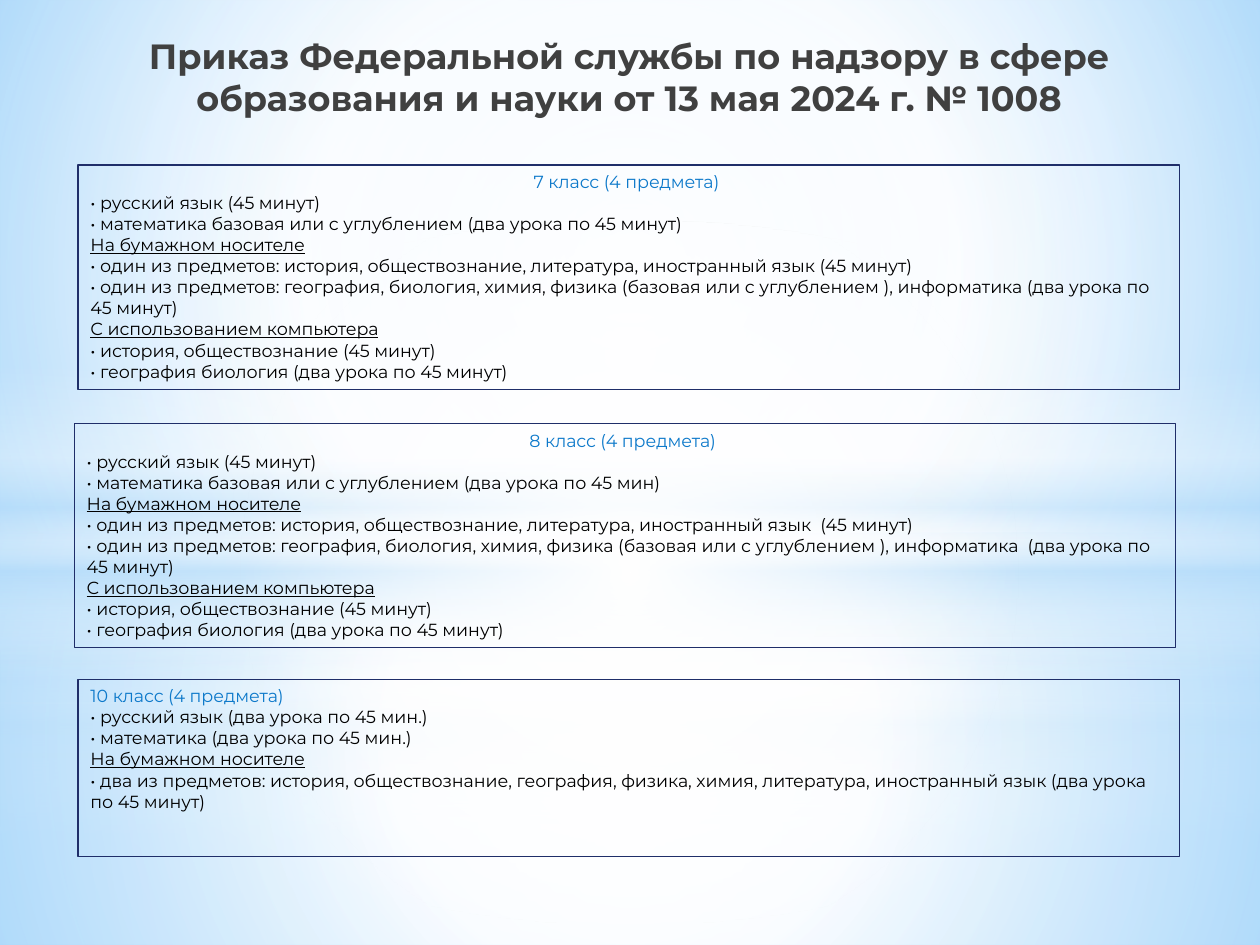
from lxml import etree
from pptx import Presentation
from pptx.dml.color import RGBColor
from pptx.enum.shapes import MSO_SHAPE
from pptx.enum.text import MSO_ANCHOR, MSO_AUTO_SIZE, PP_ALIGN
from pptx.oxml.ns import qn
from pptx.util import Inches, Pt

RECT, OVAL = MSO_SHAPE.RECTANGLE, MSO_SHAPE.OVAL
TOP, BOTTOM = MSO_ANCHOR.TOP, MSO_ANCHOR.BOTTOM
LEFT, CENTER = PP_ALIGN.LEFT, PP_ALIGN.CENTER
NO_AUTOFIT = MSO_AUTO_SIZE.NONE

FONT = "Montserrat"
WHITE = RGBColor(0xFF, 0xFF, 0xFF)
PALE = RGBColor(0xB4, 0xDC, 0xFA)
SKY = RGBColor(0x9E, 0xD5, 0xFF)
AZURE = RGBColor(0x5B, 0xB9, 0xFF)
NAVY = RGBColor(0x1F, 0x2E, 0x69)
BLUE = RGBColor(0x0D, 0x79, 0xCA)
BLACK = RGBColor(0, 0, 0)
GRAY = RGBColor(0x40, 0x40, 0x40)
MIDDLE = (50, 50, 50, 50)


def set_gradient(fill, element, stops, focus=None):
    fill.gradient()
    gradient = element.find(".//" + qn("a:gradFill"))
    gradient.clear()
    gradient.set("rotWithShape", "1")
    stop_list = etree.SubElement(gradient, qn("a:gsLst"))
    for position, color, opacity in stops:
        stop = etree.SubElement(stop_list, qn("a:gs"), pos=str(position * 1000))
        tint = etree.SubElement(stop, qn("a:srgbClr"), val=str(color))
        if opacity < 100:
            etree.SubElement(tint, qn("a:alpha"), val=str(opacity * 1000))
    if focus:
        circle = etree.SubElement(gradient, qn("a:path"), path="circle")
        sides = {side: str(value * 1000) for side, value in zip("ltrb", focus)}
        etree.SubElement(circle, qn("a:fillToRect"), **sides)
    else:
        etree.SubElement(gradient, qn("a:lin"), ang="5400000", scaled="0")


def write_run(paragraph, text, size, color):
    run = paragraph.add_run()
    run.text = text
    run.font.name = FONT
    run.font.size = Pt(size)
    run.font.color.rgb = color
    return run


prs = Presentation()
prs.slide_width, prs.slide_height = Inches(10), Inches(7.5)
slide = prs.slides.add_slide(prs.slide_layouts[5])

set_gradient(slide.background.fill, slide.element,
             [(0, SKY, 100), (60, WHITE, 100), (100, AZURE, 100)], (20, 10, 20, 60))

wave = [(0, WHITE, 0), (29, WHITE, 30), (45, PALE, 40),
        (55, WHITE, 26), (65, PALE, 60), (100, WHITE, 0)]
backdrop = []
for horizon, wave_top, shift, glow_end in [(5.58, 4.12, 0, 56), (4.23, 2.9, 1, 54)]:
    ground = [(0, WHITE, 91 + shift), (37, WHITE, 76 + shift), (100, PALE, 79 + shift)]
    sky = [(0, WHITE, 89 + shift), (48, WHITE, 62 + shift), (100, PALE, 79 + shift)]
    glow = [(0, WHITE, 100), (glow_end, WHITE, 0)]
    backdrop += [
        (RECT, horizon, 7.5 - horizon, ground, MIDDLE),
        (RECT, 0, horizon, sky, MIDDLE),
        (RECT, wave_top, 2.5, wave, None),
        (OVAL, 1.75, 5.58, glow, MIDDLE),
    ]
for outline, top, height, stops, focus in backdrop:
    layer = slide.shapes.add_shape(outline, 0, Inches(top), Inches(10), Inches(height))
    layer.shadow.inherit = False
    layer.line.fill.background()
    set_gradient(layer.fill, layer.element, stops, focus)

title = slide.shapes.title
slide.shapes.element.append(title.element)
title.left, title.top = Inches(0.9), Inches(0.36)
title.width, title.height = Inches(8.19), Inches(0.94)
heading = title.text_frame
heading.word_wrap = True
heading.auto_size = NO_AUTOFIT
heading.vertical_anchor = BOTTOM
heading.margin_top, heading.margin_bottom = 0, Inches(0.36)
heading.paragraphs[0].alignment = CENTER
title_run = write_run(
    heading.paragraphs[0],
    "Приказ Федеральной службы по надзору в сфере образования и науки от 13 мая 2024 г. № 1008",
    20, GRAY)
title_run.font.bold = True

PAPER = "На бумажном носителе"
COMPUTER = "С использованием компьютера"
RUSSIAN = "• русский язык (45 минут)"
MATH = "• математика базовая или с углублением (два урока по 45 "
HUMANITIES = "• один из предметов: история, обществознание, литература, иностранный язык "
SCIENCES = ("• один из предметов: география, биология, химия, физика "
            "(базовая или с углублением ), информатика ")
ON_COMPUTER = [COMPUTER, "• история, обществознание (45 минут)",
               "• география биология (два урока по 45 минут)"]

grades = [
    (0.62, 5.39, 1.41, LEFT, "10 класс (4 предмета)", [
        "• русский язык (два урока по 45 мин.)",
        "• математика (два урока по 45 мин.)",
        PAPER,
        "• два из предметов: история, обществознание, география, физика, химия, "
        "литература, иностранный язык (два урока по 45 минут)",
    ]),
    (0.59, 3.36, 1.78, CENTER, "8 класс (4 предмета) ", [
        RUSSIAN, MATH + "мин)", PAPER, HUMANITIES + " (45 минут)",
        SCIENCES + " (два урока по 45 минут)", *ON_COMPUTER,
    ]),
    (0.62, 1.31, 1.78, CENTER, "7 класс (4 предмета) ", [
        RUSSIAN, MATH + "минут)", PAPER, HUMANITIES + "(45 минут)",
        SCIENCES + "(два урока по 45 минут)", *ON_COMPUTER,
    ]),
]
for left, top, height, alignment, grade, subjects in grades:
    panel = slide.shapes.add_shape(RECT, Inches(left), Inches(top), Inches(8.74), Inches(height))
    panel.shadow.inherit = False
    panel.fill.background()
    panel.line.color.rgb = NAVY
    panel.line.width = Pt(0.75)
    frame = panel.text_frame
    frame.word_wrap = True
    frame.vertical_anchor = TOP
    frame.paragraphs[0].alignment = alignment
    write_run(frame.paragraphs[0], grade, 10, BLUE)
    for subject in subjects:
        paragraph = frame.add_paragraph()
        paragraph.alignment = LEFT
        subject_run = write_run(paragraph, subject, 10, BLACK)
        if subject in (PAPER, COMPUTER):
            subject_run.font.underline = True

prs.save("out.pptx")
